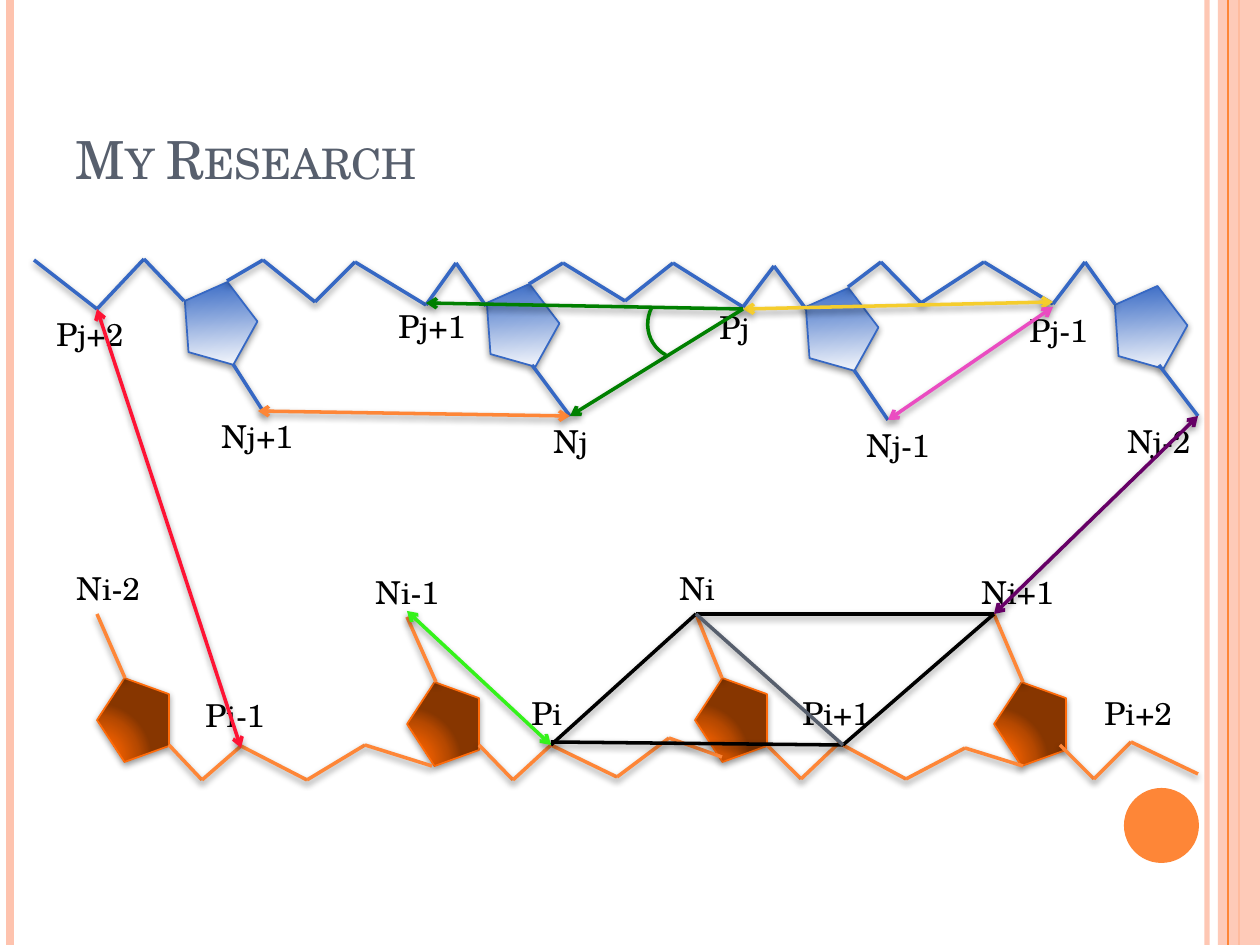
from typing import NamedTuple, Optional

import lxml.etree
import pptx
import pptx.dml.color
import pptx.enum.shapes
import pptx.enum.text
import pptx.oxml
import pptx.oxml.ns
import pptx.util

PX = 914400 / 126
FONT = "TeX Gyre Schola"
BLUE, ORANGE, PEACH, SLATE = "3668C4", "FE8637", "FEC3AE", "575F6D"
GREEN, BLACK = "008000", "000000"
SHAPE = pptx.enum.shapes.MSO_SHAPE
NS = 'xmlns:a="http://schemas.openxmlformats.org/drawingml/2006/main"'


class Point(NamedTuple):
    x: int
    y: int


class Label(NamedTuple):
    text: str
    x: int
    y: int
    width: int


class Distance(NamedTuple):
    start: Point
    end: Point
    color: str
    head: bool = False
    tail: bool = False


class Sugar(NamedTuple):
    center: Point
    base: tuple[Point, Point]


def emu(px: float) -> pptx.util.Emu:
    return pptx.util.Emu(round(px * PX))


def rgb(color: str) -> pptx.dml.color.RGBColor:
    return pptx.dml.color.RGBColor.from_string(color)


def set_alpha(properties, percent: int) -> None:
    color = properties.find(".//" + pptx.oxml.ns.qn("a:srgbClr"))
    lxml.etree.SubElement(color, pptx.oxml.ns.qn("a:alpha"), val=str(percent * 1000))


def set_shadow(item, alpha: Optional[int], distance: float = 2) -> None:
    """Replace the theme's shadow; alpha None means no shadow."""
    shadow = "" if alpha is None else (
        f'<a:outerShdw blurRad="50800" dist="{round(distance * 12700)}" dir="5400000" rotWithShape="0">'
        f'<a:srgbClr val="000000"><a:alpha val="{alpha * 1000}"/></a:srgbClr></a:outerShdw>')
    properties = item._element.spPr
    for old in properties.findall(pptx.oxml.ns.qn("a:effectLst")):
        properties.remove(old)
    properties.append(pptx.oxml.parse_xml(f"<a:effectLst {NS}>{shadow}</a:effectLst>"))


def add_line(slide, line: Distance, width: float = 2, shadow: Optional[int] = 40):
    connector = slide.shapes.add_connector(
        pptx.enum.shapes.MSO_CONNECTOR.STRAIGHT, *map(emu, (*line.start, *line.end)))
    connector.line.color.rgb = rgb(line.color)
    connector.line.width = pptx.util.Pt(width)
    for tag, shown in (("a:headEnd", line.head), ("a:tailEnd", line.tail)):
        if shown:
            lxml.etree.SubElement(connector.line._ln, pptx.oxml.ns.qn(tag), type="arrow")
    set_shadow(connector, shadow)
    return connector


def add_strand(slide, points: list[Point], color: str) -> None:
    for start, end in zip(points, points[1:]):
        add_line(slide, Distance(start, end, color))


def add_solid(slide, kind, box: tuple[int, int, int, int], color: str):
    shape = slide.shapes.add_shape(kind, *map(emu, box))
    shape.fill.solid()
    shape.fill.fore_color.rgb = rgb(color)
    shape.line.fill.background()
    set_shadow(shape, None)
    return shape


def add_sugar(slide, center: Point, size: tuple[int, int], rotation: float,
              stops: dict[int, str], direction: str, outline: str) -> None:
    width, height = size
    sugar = slide.shapes.add_shape(
        SHAPE.REGULAR_PENTAGON, emu(center.x - width / 2), emu(center.y - height / 2),
        emu(width), emu(height))
    sugar.rotation = rotation
    sugar.line.color.rgb = rgb(outline)
    sugar.line.width = pptx.util.Pt(1)
    colors = "".join(f'<a:gs pos="{at * 1000}"><a:srgbClr val="{color}"/></a:gs>'
                     for at, color in stops.items())
    gradient = pptx.oxml.parse_xml(
        f'<a:gradFill {NS} rotWithShape="1"><a:gsLst>{colors}</a:gsLst>{direction}</a:gradFill>')
    sugar._element.spPr.find(pptx.oxml.ns.qn("a:ln")).addprevious(gradient)
    set_shadow(sugar, 42, 1.6)


def add_label(slide, label: Label) -> None:
    box = slide.shapes.add_textbox(*map(emu, (label.x, label.y, label.width, 50)))
    box.text_frame.word_wrap = True
    paragraph = box.text_frame.paragraphs[0]
    paragraph.text = label.text
    paragraph.font.size = pptx.util.Pt(18)
    paragraph.font.name = FONT
    paragraph.font.color.rgb = rgb(BLACK)


def add_title(slide, text: str) -> None:
    title = slide.shapes.title
    title.left, title.top, title.width, title.height = map(emu, (63, 38, 1029, 158))
    title.text_frame.vertical_anchor = pptx.enum.text.MSO_ANCHOR.BOTTOM
    paragraph = title.text_frame.paragraphs[0]
    paragraph.text = text
    paragraph.alignment = pptx.enum.text.PP_ALIGN.LEFT
    paragraph.font.size = pptx.util.Pt(30)
    paragraph.font.name = FONT
    paragraph.font.color.rgb = rgb(SLATE)
    paragraph._p.pPr.defRPr.set("cap", "small")


def points(*pairs: tuple[int, int]) -> list[Point]:
    return [Point(*pair) for pair in pairs]


# Phosphate (P) and base (N) positions that the distances run between
P_J2, P_J1, P_J, P_J_1 = points((97, 309), (426, 303), (743, 309), (1053, 302))
N_J1, N_J, N_J_1, N_J_2 = points((263, 411), (570, 416), (888, 420), (1198, 416))
N_I_2, N_I_1, N_I, N_I1 = points((97, 614), (407, 617), (696, 614), (994, 614))
P_I_1, P_I, P_I1 = points((241, 746), (551, 745), (843, 745))

UPPER_SUGARS = [
    Sugar(Point(222, 324), (Point(233, 364), N_J1)),
    Sugar(Point(524, 326), (Point(532, 365), N_J)),
    Sugar(Point(843, 330), (Point(854, 370), N_J_1)),
    Sugar(Point(1152, 328), (Point(1159, 365), N_J_2)),
]
LOWER_SUGARS = [
    Sugar(Point(133, 720), (Point(125, 678), N_I_2)),
    Sugar(Point(443, 724), (Point(436, 682), N_I_1)),
    Sugar(Point(731, 720), (Point(722, 678), N_I)),
    Sugar(Point(1030, 724), (Point(1023, 682), N_I1)),
]
UPPER_STRAND = [
    points((34, 260), P_J2, (144, 259), (184, 301)),
    points((227, 281), (263, 260), (315, 302), (355, 262), (426, 305), (456, 263), (486, 306)),
    points((529, 284), (563, 263), (625, 301), (673, 263), (743, 307), (774, 266), (806, 309)),
    points((848, 287), (881, 262), (921, 303), (984, 262), (1053, 304), (1085, 262), (1115, 304)),
]
LOWER_STRAND = [
    points((169, 745), (202, 780), P_I_1, (307, 780), (365, 745), (432, 766)),
    points((479, 745), (513, 780), P_I, (617, 777), (669, 738), (722, 757)),
    points((767, 745), (801, 779), (839, 743), (906, 779), (965, 748), (1023, 766)),
    points((1060, 745), (1094, 779), (1131, 742), (1198, 774)),
]
LABELS = [
    Label("Pj+2", 44, 309, 106), Label("Pj+1", 386, 301, 95),
    Label("Pj", 707, 302, 72), Label("Pj-1", 1017, 305, 98),
    Label("Nj+1", 209, 411, 98), Label("Nj", 541, 416, 101),
    Label("Nj-1", 854, 420, 111), Label("Nj-2", 1115, 416, 88),
    Label("Ni-2", 64, 563, 108), Label("Ni-1", 363, 567, 101),
    Label("Ni", 667, 563, 97), Label("Ni+1", 969, 567, 108),
    Label("Pi-1", 193, 690, 96), Label("Pi", 519, 688, 59),
    Label("Pi+1", 790, 688, 98), Label("Pi+2", 1092, 688, 106),
]
DISTANCES = [
    Distance(P_J, P_J_1, "F5CD2D", True, True),
    Distance(Point(258, 411), N_J, ORANGE, True, True),
    Distance(N_I1, N_J_2, "660066", True, True),
    Distance(N_I, N_I1, BLACK),
    Distance(N_I, P_I, BLACK),
    Distance(Point(551, 742), P_I1, BLACK),
    Distance(N_I1, P_I1, BLACK),
    Distance(P_J2, Point(241, 748), "FE1334", True, True),
    Distance(N_I, P_I1, SLATE),
    Distance(P_J, P_J1, GREEN, tail=True),
    Distance(P_J, N_J, GREEN, tail=True),
    Distance(P_I, Point(407, 611), "34F21A", True, True),
    Distance(N_J_1, Point(1053, 307), "EA4CC1", True, True),
]


def main() -> None:
    deck = pptx.Presentation()
    deck.slide_width, deck.slide_height = emu(1260), emu(945)
    slide = deck.slides.add_slide(deck.slide_layouts[5])

    # Side stripes and corner disc
    def add_stripe(x: int, color: str, width: float):
        return add_line(slide, Distance(Point(x, 0), Point(x, 945), color), width, None)

    set_alpha(add_stripe(1207, PEACH, 3).line._ln, 93)
    add_stripe(10, PEACH, 4.5)
    add_stripe(1239, ORANGE, 1.5)
    band = add_solid(slide, SHAPE.RECTANGLE, (1218, 0, 42, 945), PEACH)
    set_alpha(band._element.spPr, 87)
    add_stripe(1228, ORANGE, 0.75)
    add_solid(slide, SHAPE.OVAL, (1124, 788, 75, 75), ORANGE)
    add_title(slide, "My Research")

    # Two strands: sugars, bases and backbones
    for sugar in LOWER_SUGARS:
        add_sugar(slide, sugar.center, (84, 72), 270,
                  {0: "FD6400", 30: "F46100", 75: "B74900", 100: "873600"},
                  '<a:path path="circle"><a:fillToRect l="5000" t="100000" r="120000" b="10000"/></a:path>',
                  "FF6B0A")
    for sugar in UPPER_SUGARS:
        add_sugar(slide, sugar.center, (83, 71), 85.9, {0: BLUE, 100: "FFFFFF"},
                  '<a:lin ang="0" scaled="0"/>', BLUE)
    for sugars, strand, color in ((LOWER_SUGARS, LOWER_STRAND, ORANGE),
                                  (UPPER_SUGARS, UPPER_STRAND, BLUE)):
        for run in [sugar.base for sugar in sugars] + strand:
            add_strand(slide, run, color)
    for label in LABELS:
        add_label(slide, label)

    # Measured distances and the angle at Pj
    for distance in DISTANCES:
        add_line(slide, distance)
    angle = slide.shapes.add_shape(SHAPE.ARC, *map(emu, (648, 287, 69, 72)))
    angle.rotation = 207.5
    angle.fill.background()
    angle.line.color.rgb = rgb(GREEN)
    angle.line.width = pptx.util.Pt(2)
    set_shadow(angle, 40)

    deck.save("out.pptx")


if __name__ == "__main__":
    main()
